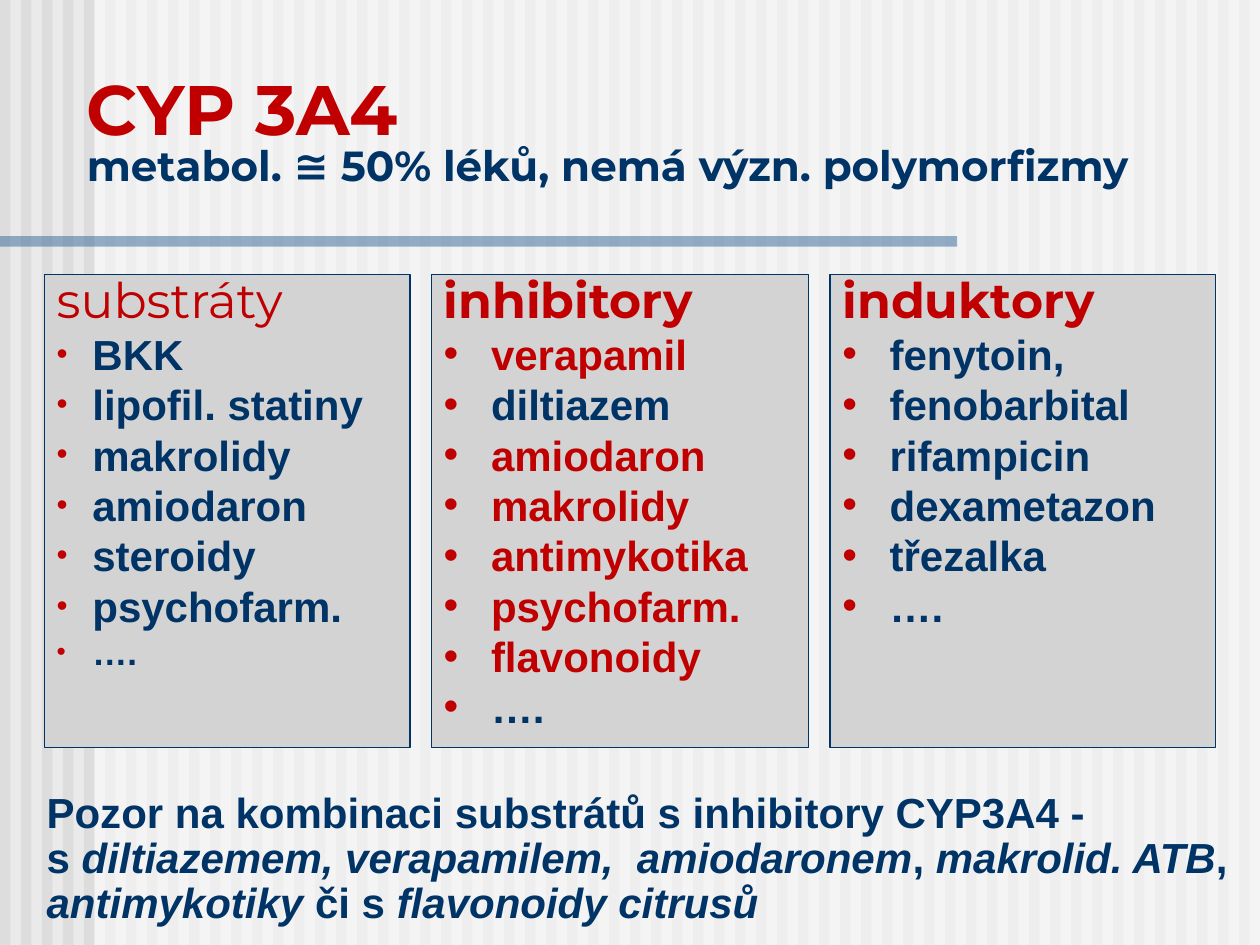
from dataclasses import dataclass

from lxml.etree import SubElement
from pptx import Presentation
from pptx.dml.color import RGBColor
from pptx.enum.shapes import MSO_SHAPE as Shape
from pptx.enum.text import MSO_ANCHOR as Anchor, PP_ALIGN as Align
from pptx.oxml.ns import qn
from pptx.slide import Slide
from pptx.util import Pt

WIDTH, HEIGHT = 720, 540
COLUMN_TOP, COLUMN_HEIGHT = 157, 270


def color(value):
    return RGBColor.from_string(value)


def write(paragraph, text, size=24, font="Arial", fill="003366", bold=True, italic=False):
    run = paragraph.add_run()
    run.text = text
    run.font.size = Pt(size)
    run.font.name = font
    run.font.color.rgb = color(fill)
    run.font.bold = bold
    run.font.italic = italic


@dataclass
class Painter:
    """Draws the elements of one slide in a shared style."""

    slide: Slide
    navy: str = "003366"
    red: str = "C00000"
    panel: str = "D3D3D3"
    heading: str = "Montserrat"

    def rectangle(self, left, top, width, height, fill, opacity=100, line=None):
        shape = self.slide.shapes.add_shape(
            Shape.RECTANGLE, Pt(left), Pt(top), Pt(width), Pt(height))
        shape.shadow.inherit = False
        shape.fill.solid()
        shape.fill.fore_color.rgb = color(fill)
        if opacity < 100:
            tint = shape._element.spPr.find(".//" + qn("a:srgbClr"))
            SubElement(tint, qn("a:alpha"), val=str(opacity * 1000))
        if line:
            shape.line.color.rgb = color(line)
            shape.line.width = Pt(0.75)
        else:
            shape.line.fill.background()
        return shape

    def text_box(self, left, top, width, height):
        box = self.slide.shapes.add_textbox(Pt(left), Pt(top), Pt(width), Pt(height))
        box.text_frame.word_wrap = True
        box.text_frame.vertical_anchor = Anchor.MIDDLE
        return box.text_frame

    def bullet(self, paragraph, indent, percent):
        properties = paragraph._p.get_or_add_pPr()
        properties.set("marL", str(Pt(indent)))
        properties.set("indent", str(-Pt(indent)))
        tint = SubElement(properties, qn("a:buClr"))
        SubElement(tint, qn("a:srgbClr"), val=self.red)
        SubElement(properties, qn("a:buSzPct"), val=str(percent * 1000))
        SubElement(properties, qn("a:buFont"), typeface="Arial")
        SubElement(properties, qn("a:buChar"), char="•")

    def column(self, left, width, title, items, bold=True, indent=27, percent=100,
               highlighted=(), last_size=24):
        shape = self.rectangle(left, COLUMN_TOP, width, COLUMN_HEIGHT, self.panel, line=self.navy)
        frame = shape.text_frame
        frame.word_wrap = True
        frame.vertical_anchor = Anchor.TOP
        for index, text in enumerate([title, *items]):
            paragraph = frame.add_paragraph() if index else frame.paragraphs[0]
            size = last_size if index == len(items) else 24 if index else 28
            paragraph.alignment = Align.LEFT
            paragraph.line_spacing = 0.8
            paragraph.space_before = Pt(round(size * 0.24, 2))
            if index:
                self.bullet(paragraph, indent, percent)
                fill = self.red if text in highlighted else self.navy
                write(paragraph, text, size=size, fill=fill)
            else:
                write(paragraph, text, size=size, font=self.heading, fill=self.red, bold=bold)

    def title(self, main, subtitle):
        paragraph = self.text_box(42.5, 32.4, 658, 90).paragraphs[0]
        paragraph.line_spacing = 0.8
        write(paragraph, main, size=40, font=self.heading, fill=self.red)
        paragraph.add_line_break()
        write(paragraph, subtitle, font=self.heading)

    def warning(self, lines):
        frame = self.text_box(19.6, 446.4, 695, 90)
        for index, parts in enumerate(lines):
            paragraph = frame.add_paragraph() if index else frame.paragraphs[0]
            paragraph.line_spacing = 0.9
            for position, text in enumerate(parts):
                write(paragraph, text, italic=position % 2 == 1)

    def backdrop(self):
        background = self.slide.background.fill
        background.solid()
        background.fore_color.rgb = color("EAEAEA")
        for left in range(0, WIDTH, 12):
            self.rectangle(left, 0, 6, HEIGHT, "DDDDDD")
        self.rectangle(54, 0, WIDTH - 54, HEIGHT, "FFFFFF", opacity=50)
        self.rectangle(0, 135, 547, 6, "336699", opacity=50)


def main():
    presentation = Presentation()
    presentation.slide_width, presentation.slide_height = Pt(WIDTH), Pt(HEIGHT)
    painter = Painter(presentation.slides.add_slide(presentation.slide_layouts[6]))
    painter.backdrop()

    substrates = ["BKK", "lipofil. statiny", "makrolidy", "amiodaron", "steroidy",
                  "psychofarm.", "…."]
    inhibitors = ["verapamil", "diltiazem", "amiodaron", "makrolidy", "antimykotika",
                  "psychofarm.", "flavonoidy", "…."]
    inducers = ["fenytoin,", "fenobarbital", "rifampicin", "dexametazon", "třezalka", "…."]
    painter.column(25.3, 209, "substráty", substrates, bold=False, indent=20.4,
                   percent=75, last_size=20)
    painter.column(246.5, 215.5, "inhibitory", inhibitors,
                   highlighted=set(inhibitors) - {"diltiazem", "…."})
    painter.column(474.3, 220.3, "induktory", inducers)

    painter.warning([
        ["Pozor na kombinaci substrátů s inhibitory CYP3A4 -"],
        ["s ", "diltiazemem, verapamilem,  amiodaronem", ", ", "makrolid. ATB", ", ",
         "antimykotiky", " či s ", "flavonoidy citrusů"],
    ])
    painter.title("CYP 3A4", "metabol. ≅ 50% léků, nemá význ. polymorfizmy")
    presentation.save("out.pptx")


if __name__ == "__main__":
    main()
